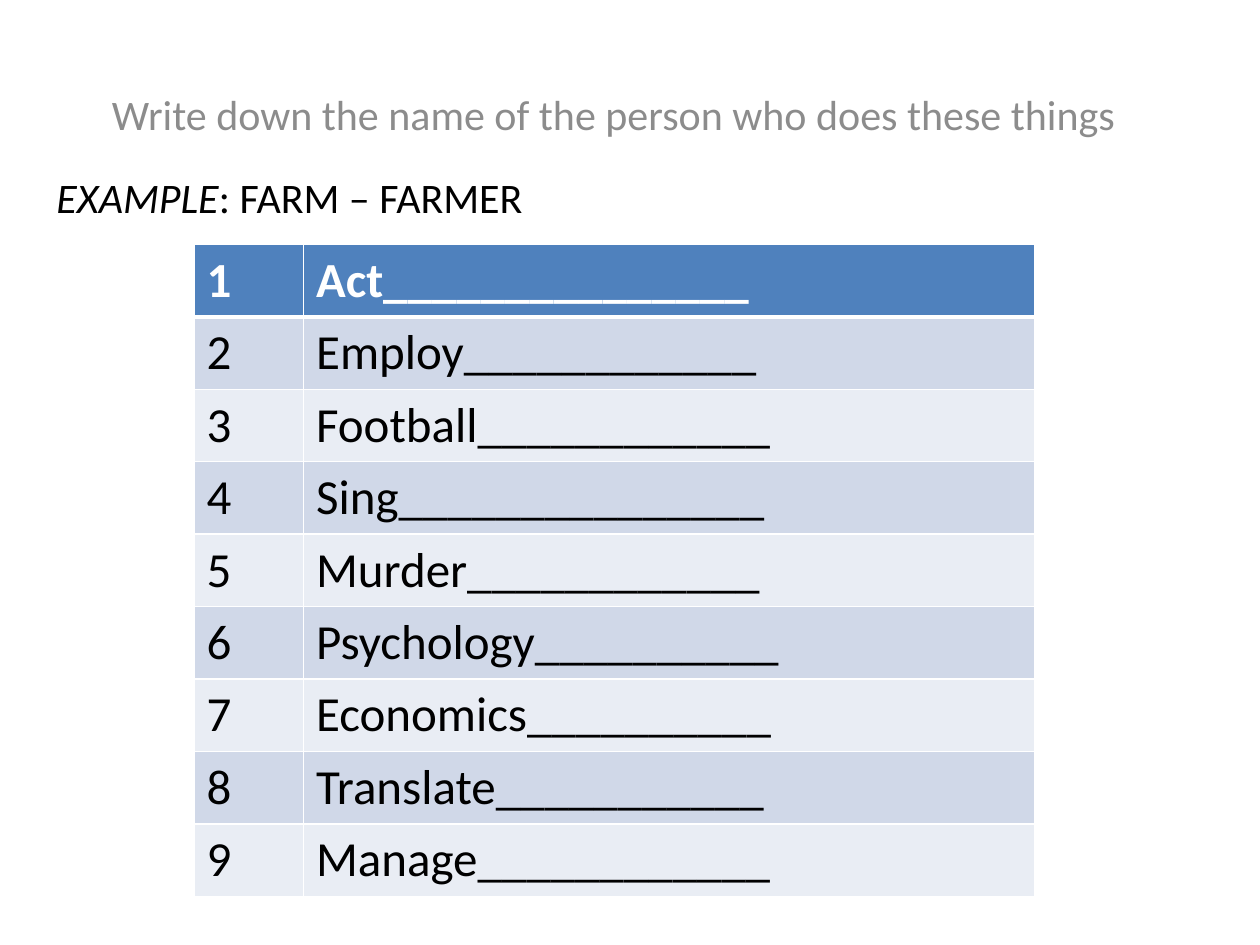
from lxml.etree import SubElement
from pptx import Presentation
from pptx.dml.color import RGBColor
from pptx.enum.text import MSO_ANCHOR as Anchor
from pptx.oxml.ns import qn
from pptx.util import Pt

FONT = "Calibri"
BLACK, WHITE, GREY = "000000", "FFFFFF", "8C8C8C"
HEADER, BAND_DARK, BAND_LIGHT = "4F81BD", "D0D8E8", "E9EDF4"

# Each word with the number of underscores in its answer line
WORDS = [
    ("Act", 15), ("Employ", 12), ("Football", 12),
    ("Sing", 15), ("Murder", 12), ("Psychology", 10),
    ("Economics", 10), ("Translate", 11), ("Manage", 12),
]


def color(value):
    return RGBColor.from_string(value)


def add_span(para, text, ink, **formats):
    span = para.add_run()
    span.text = text
    span.font.color.rgb = color(ink)
    for name, value in {"name": FONT, **formats}.items():
        setattr(span.font, name, value)


def add_text(page, box, spans, ink, anchor):
    frame = page.shapes.add_textbox(*map(Pt, box)).text_frame
    frame.word_wrap = True
    frame.vertical_anchor = anchor
    for text, italic in spans:
        add_span(frame.paragraphs[0], text, ink, size=Pt(24), italic=italic)


def add_border(cell, side, width):
    line = SubElement(cell._tc.get_or_add_tcPr(), qn(f"a:ln{side}"), w=str(Pt(width)))
    fill = SubElement(line, qn("a:solidFill"))
    SubElement(fill, qn("a:srgbClr"), val=WHITE)


def fill_cell(cell, text, row):
    # Borders precede the fill; the rule under the header is thicker
    widths = {"L": 1, "R": 1, "T": 3 if row == 1 else 1, "B": 3 if row == 0 else 1}
    for side, width in widths.items():
        add_border(cell, side, width)
    band = BAND_DARK if row % 2 else BAND_LIGHT
    cell.fill.solid()
    cell.fill.fore_color.rgb = color(band if row else HEADER)
    add_span(cell.text_frame.paragraphs[0], text, BLACK if row else WHITE,
             size=Pt(28), bold=row == 0)


def add_word_table(page, box):
    left, top, width, height = box
    table = page.shapes.add_table(len(WORDS), 2, *map(Pt, box)).table
    number_width = 62.6
    for column, size in zip(table.columns, (number_width, width - number_width)):
        column.width = Pt(size)
    for row, (word, blanks) in enumerate(WORDS):
        table.rows[row].height = Pt(height / len(WORDS))
        for column, text in enumerate((str(row + 1), word + "_" * blanks)):
            fill_cell(table.cell(row, column), text, row)


def build_exercise(page):
    # Example
    add_text(page, (25.2, 94.3, 674.6, 425.5),
             [("EXAMPLE", True), (": FARM – FARMER", False)], BLACK, Anchor.TOP)
    # Instruction
    add_text(page, (56.9, 37.4, 612, 45.4),
             [("Write down the name of the person who does these things", False)],
             GREY, Anchor.BOTTOM)
    # Words to complete
    add_word_table(page, (110.9, 139.7, 480.2, 372.6))


def main():
    deck = Presentation()
    deck.slide_width, deck.slide_height = Pt(720), Pt(540)
    build_exercise(deck.slides.add_slide(deck.slide_layouts[6]))
    deck.save("out.pptx")


if __name__ == "__main__":
    main()
